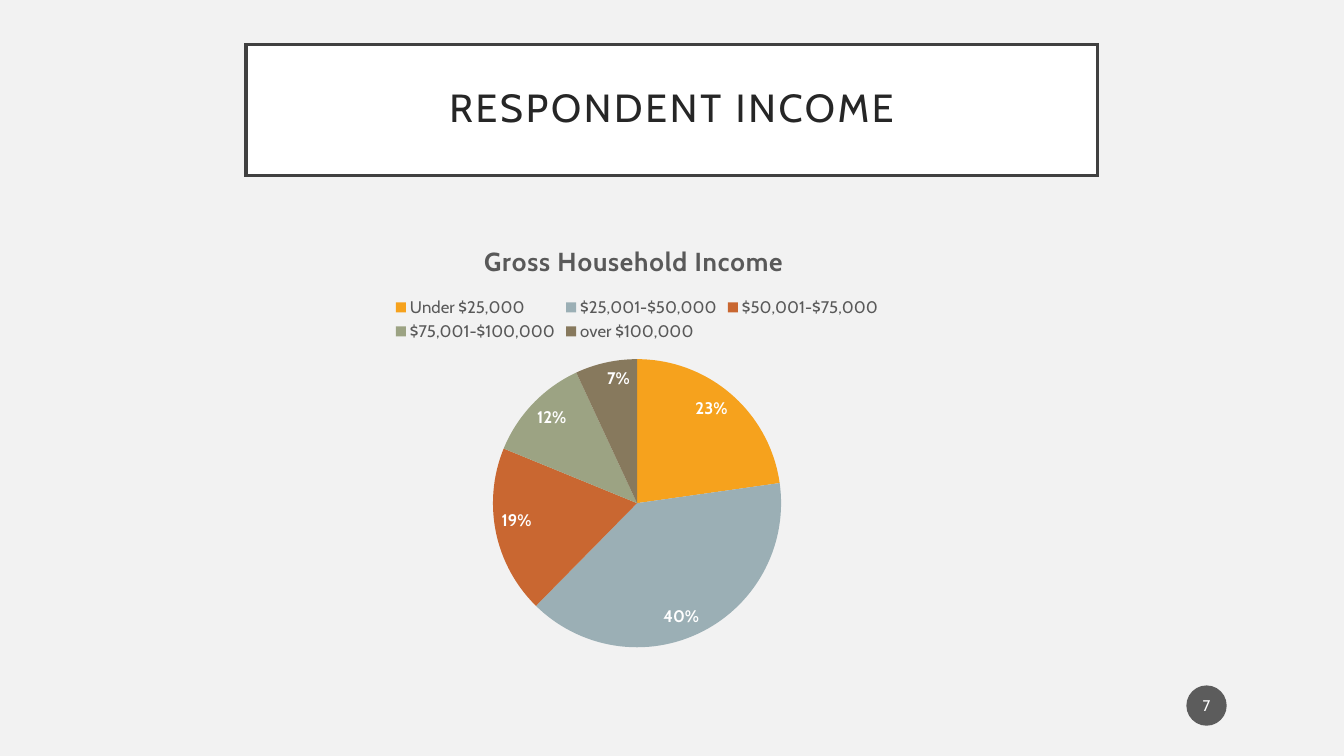
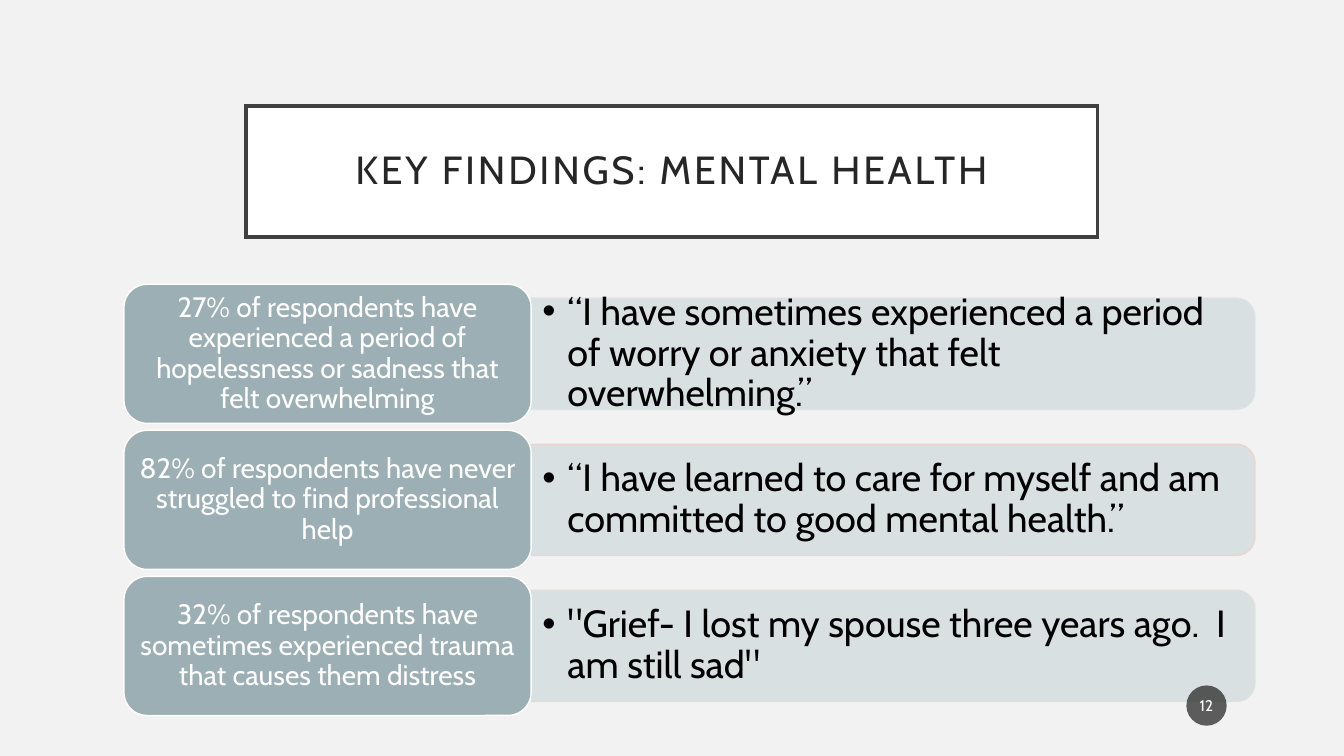
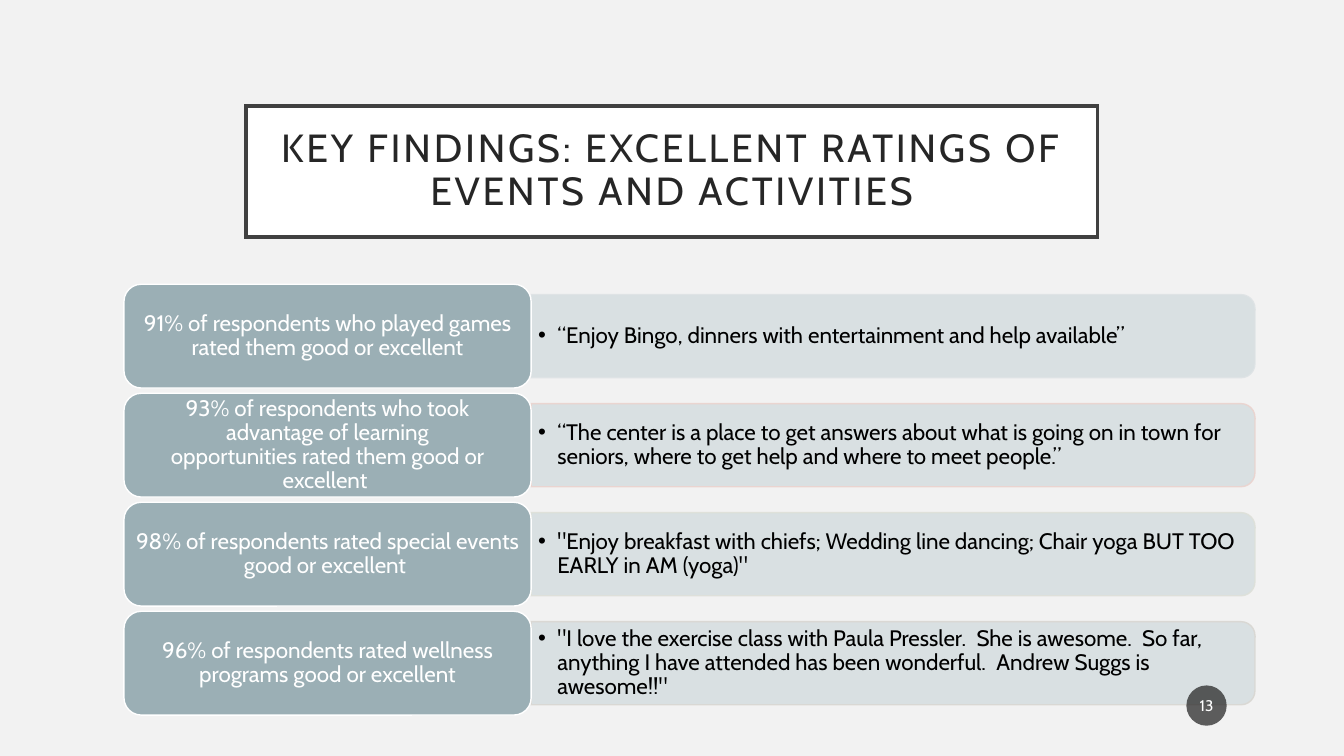
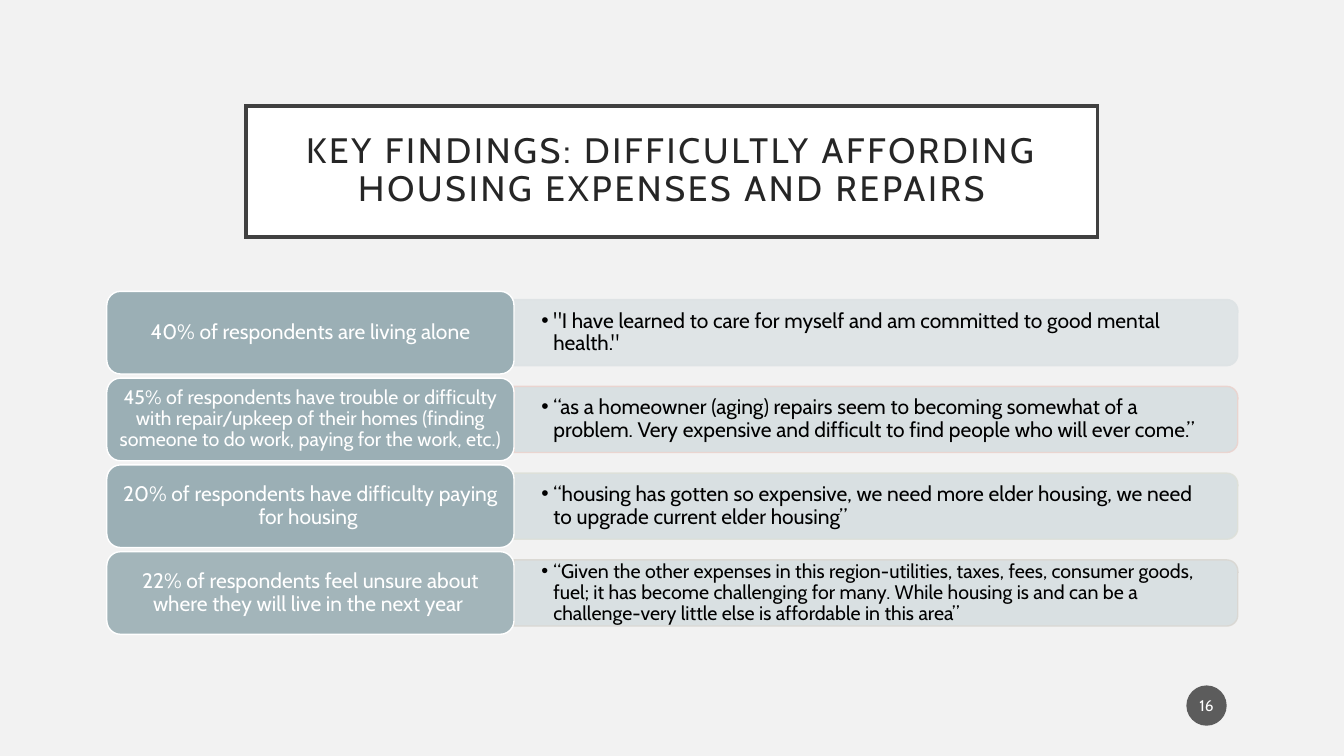
from dataclasses import dataclass
from lxml.etree import SubElement as Sub
from pptx import Presentation
from pptx.chart.data import CategoryChartData as Data
from pptx.dml.color import RGBColor as RGB
from pptx.enum.chart import XL_CHART_TYPE as Kind, XL_LABEL_POSITION as Spot, XL_LEGEND_POSITION as Side
from pptx.enum.shapes import MSO_SHAPE as Form
from pptx.enum.text import MSO_ANCHOR as Anchor, MSO_AUTO_SIZE as Fit, PP_ALIGN as Align
from pptx.oxml.ns import qn
from pptx.util import Inches, Pt


@dataclass(frozen=True)
class Theme:
    font: str = "Cabin"
    dot: str = "Arial"
    back: str = "F2F2F2"
    white: str = "FFFFFF"
    black: str = "000000"
    head: str = "262626"
    edge: str = "404040"
    gray: str = "595959"
    badge: str = "1D1D1D"
    card: str = "9BAFB5"
    band: str = "D7DFE1"
    pale: str = "DEE3E5"
    rims: tuple = ("DEE3E5", "EBD3CE", "DEE0D9", "D9D7D2")
    pie: tuple = ("F6A21D", "9BAFB5", "C96731", "9CA383", "87795D")
    big: float = 28
    fit: float = 25.2
    name: float = 18.6
    key: float = 12
    num: float = 11


T = Theme()
HARD = chr(160)

INCOME = {
    "page": 7, "title": "RESPONDENT INCOME", "top": 0.44, "size": T.big,
    "name": "Gross Household Income ",
    "data": [
        ("Under $25,000", 23),
        ("$25,001-$50,000", 40),
        ("$50,001-$75,000", 19),
        ("$75,001-$100,000", 12),
        ("over $100,000", 7),
    ],
}

FINDS = [
    {
        "page": 12, "title": "KEY FINDINGS: MENTAL HEALTH", "size": T.big,
        "left": 1.23, "first": 2.82, "high": 1.38, "pad": (0.08, 0.04),
        "inset": (0.11, 0.06), "dent": 0.25,
        "rows": [
            ("27% of respondents have experienced a period of hopelessness or sadness that felt overwhelming", 20,
             "“I have sometimes experienced a period of worry or anxiety that felt overwhelming.”", 27),
            ("82% of respondents have never struggled to find professional help", 20,
             "“I have learned to care for myself and am committed to good mental health.”", 27),
            ("32% of respondents have sometimes experienced trauma that causes them distress", 20,
             "\"Grief- I lost my spouse three years ago.~ I am still sad\"", 27),
        ],
    },
    {
        "page": 13, "title": "KEY FINDINGS: EXCELLENT RATINGS OF EVENTS AND ACTIVITIES", "size": T.big,
        "left": 1.23, "first": 2.82, "high": 1.03, "pad": (0.06, 0.03),
        "inset": (0.07, 0.03), "dent": 0.19,
        "rows": [
            ("91% of respondents who played games rated them good or excellent", 16,
             "“Enjoy Bingo, dinners with entertainment and help available”", 16),
            ("93% of respondents who took advantage of learning opportunities~rated them good or excellent~", 16,
             "“The center is a place to get answers about what is going on in town for seniors, "
             "where to get help and where to meet people.”", 16),
            ("98% of respondents rated special events good or excellent~", 16,
             "\"Enjoy breakfast with chiefs; Wedding line dancing; Chair yoga BUT TOO EARLY in AM (yoga)\"", 16),
            ("96% of respondents rated wellness programs good or excellent", 16,
             "\"I love the exercise class with Paula Pressler.~ She is awesome.~ So far, "
             "anything I have attended has been wonderful.~ Andrew Suggs is awesome!!\"", 16),
        ],
    },
    {
        "page": 16, "title": "KEY FINDINGS: DIFFICULTLY AFFORDING HOUSING EXPENSES AND REPAIRS", "size": T.fit,
        "left": 1.06, "first": 2.89, "high": 0.82, "pad": (0.06, 0.03),
        "inset": (0.27, 0.14), "dent": 0.12,
        "bands": {0: T.pale}, "clear": {3: 90},
        "rows": [
            ("40% of respondents are living alone", 15,
             "\"I have learned to care for myself and am committed to good mental health.\"~", 15),
            ("45% of respondents have trouble or difficulty with repair/upkeep of their homes "
             "(finding someone to do work, paying for the work, etc.)", 14,
             "“as a homeowner (aging) repairs seem to becoming somewhat of a problem. "
             "Very expensive and difficult to find people who will ever come.”", 15),
            ("20% of respondents have difficulty paying for housing ", 15,
             "“housing has gotten so expensive, we need more elder housing, "
             "we need to upgrade current elder housing”", 15),
            ("22% of respondents feel unsure about where they will live in the next year~", 15,
             "“Given the other expenses in this region-utilities, taxes, fees, consumer goods, fuel; "
             "it has become challenging for many. While housing is and can be a challenge-very little else "
             "is affordable in this area”", 14),
        ],
    },
]

CARD, BAND, QUOTE = 4.04, 7.18, 7.13


def put(obj, **vals):
    for key, val in vals.items():
        setattr(obj, key, val)


def ink(font, size, color, bold=False):
    put(font, name=T.font, size=Pt(size), bold=bold)
    font.color.rgb = RGB.from_string(color)


def tint(fill, color, alpha=100):
    fill.solid()
    fill.fore_color.rgb = RGB.from_string(color)
    if alpha < 100:
        clr = fill._xPr.find(qn("a:solidFill"))[0]
        Sub(clr, qn("a:alpha"), val=str(alpha * 1000))


def paint(shape, color, alpha=100, rim=None, wide=1, clear=100):
    shape.shadow.inherit = False
    tint(shape.fill, color, alpha)
    if rim:
        tint(shape.line.fill, rim, clear)
        shape.line.width = Pt(wide)
        Sub(shape.line._ln, qn("a:miter"), lim="800000")
    else:
        shape.line.fill.background()


def write(shape, text, size, color, pad, align=Align.CENTER, lead=0.9):
    frame = shape.text_frame
    x, y = map(Inches, pad)
    put(frame, word_wrap=True, auto_size=Fit.NONE, vertical_anchor=Anchor.MIDDLE,
        margin_left=x, margin_right=x, margin_top=y, margin_bottom=y)
    par = frame.paragraphs[0]
    put(par, alignment=align, line_spacing=lead)
    run = par.add_run()
    run.text = text.replace("~", HARD)
    ink(run.font, size, color)
    return par


def space(run, pts):
    run.font._element.set("spc", str(int(pts * 100)))


def box(at):
    return [Inches(v) for v in at]


def start(deck, item):
    slide = deck.slides.add_slide(deck.slide_layouts[5])
    head = slide.shapes.title
    put(head, **dict(zip(("left", "top", "width", "height"),
                         box((2.44, item.get("top", 1.05), 8.45, 1.3)))))
    paint(head, T.white, rim=T.edge, wide=2.5)
    par = write(head, item["title"], item["size"], T.head, (0.2, 0.2))
    space(par.runs[0], 2)
    return slide


def badge(slide, page):
    dot = slide.shapes.add_shape(Form.OVAL, *box((11.77, 6.8, 0.4, 0.4)))
    paint(dot, T.badge, 70)
    write(dot, str(page), T.num, T.white, (0.02, 0.05), lead=1.0)


def income(deck, item):
    slide = start(deck, item)
    data = Data()
    data.categories = [cat for cat, _ in item["data"]]
    data.add_series(item["name"], [val for _, val in item["data"]])
    chart = slide.shapes.add_chart(Kind.PIE, *box((2.22, 2.23, 8.2, 4.33)), data).chart
    ink(chart.font, 10, T.black)
    put(chart, has_title=True, has_legend=True)
    run = chart.chart_title.text_frame.paragraphs[0].add_run()
    run.text = item["name"]
    ink(run.font, T.name, T.gray, True)
    space(run, 0.5)
    chart.chart_title.include_in_layout = False
    put(chart.legend, position=Side.TOP, include_in_layout=False)
    ink(chart.legend.font, T.key, T.gray)
    plot = chart.plots[0]
    put(plot, vary_by_categories=True, has_data_labels=True)
    tags = plot.data_labels
    put(tags, show_percentage=True, show_value=False, position=Spot.INSIDE_END,
        number_format="0%", number_format_is_linked=False)
    ink(tags.font, T.key, T.white, True)
    for i, color in enumerate(T.pie):
        tint(plot.series[0].points[i].format.fill, color)
    badge(slide, item["page"])


def finding(deck, item):
    slide = start(deck, item)
    add = slide.shapes
    left, high = item["left"], item["high"]
    thin, side = high * 0.8, left + CARD
    for i, (fact, small, quote, large) in enumerate(item["rows"]):
        top = item["first"] + i * high * 1.05
        mid = top + high / 2
        band = add.add_shape(Form.ROUND_2_SAME_RECTANGLE,
                             *box((side + (BAND - thin) / 2, mid - BAND / 2, thin, BAND)))
        band.rotation = 90
        paint(band, item.get("bands", {}).get(i, T.band), 90, T.rims[i], clear=90)
        note = add.add_textbox(*box((side, mid - thin * 0.45, QUOTE, thin * 0.9)))
        par = write(note, quote, large, T.black, item["inset"], Align.LEFT)
        props, dent = par._p.get_or_add_pPr(), Inches(item["dent"])
        props.set("marL", str(dent))
        props.set("indent", str(-dent))
        Sub(props, qn("a:buFont"), typeface=T.dot)
        Sub(props, qn("a:buChar"), char="•")
        card = add.add_shape(Form.ROUNDED_RECTANGLE, *box((left, top, CARD, high)))
        paint(card, T.card, item.get("clear", {}).get(i, 100), T.white)
        write(card, fact, small, T.white, item["pad"])
    badge(slide, item["page"])


def main():
    deck = Presentation()
    put(deck, slide_width=Inches(40) // 3, slide_height=Inches(7.5))
    tint(deck.slide_master.background.fill, T.back)
    income(deck, INCOME)
    for item in FINDS:
        finding(deck, item)
    deck.save("out.pptx")


if __name__ == "__main__":
    main()
